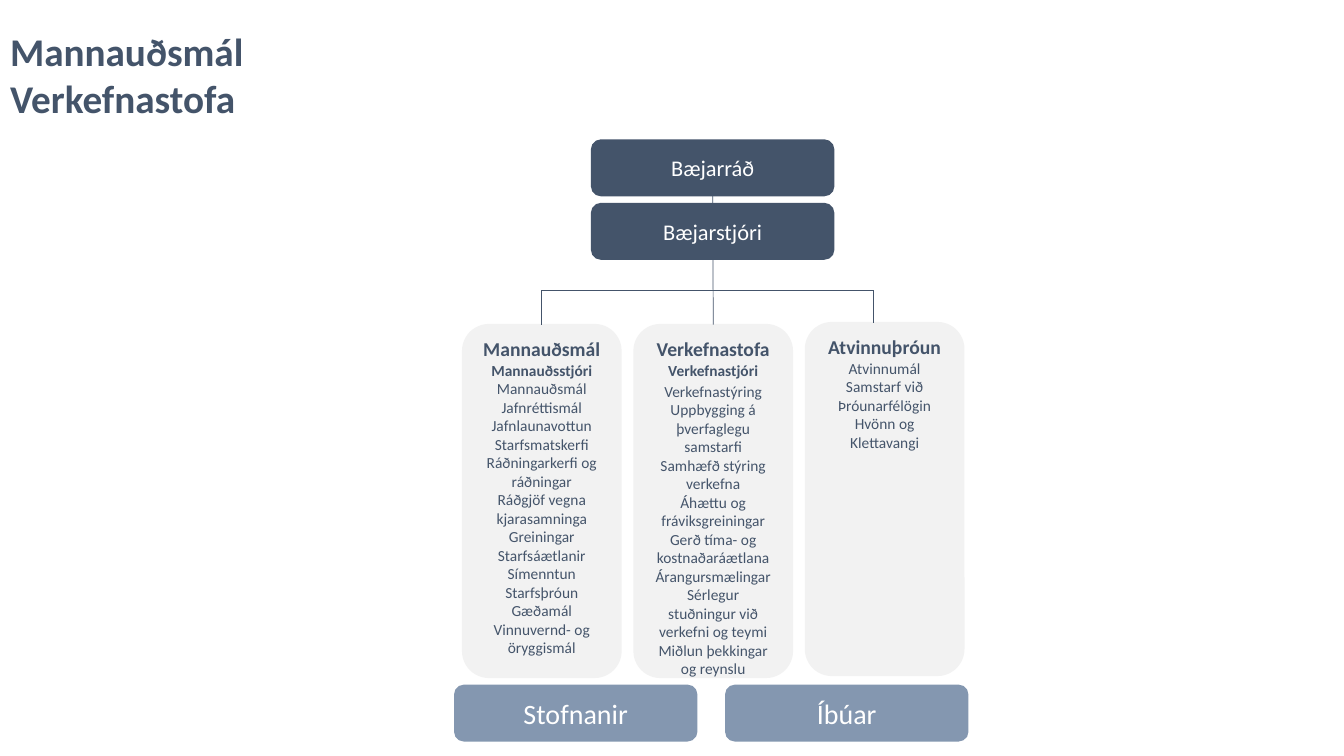
"""Build the organisation chart slide for human resources and the project office."""
from dataclasses import dataclass

from pptx import Presentation
from pptx.dml.color import RGBColor
from pptx.enum.shapes import MSO_CONNECTOR as Connector, MSO_SHAPE as Shape
from pptx.enum.text import MSO_ANCHOR as Anchor, MSO_AUTO_SIZE as AutoSize, PP_ALIGN as Align
from pptx.oxml.ns import qn
from pptx.util import Cm, Pt

NAVY, BLUE, PALE, WHITE = "44546A", "8497B0", "F2F2F2", "FFFFFF"
BOX_WIDTH, BOX_HEIGHT = 6.1, 1.4
COLUMN_WIDTH, COLUMN_HEIGHT = 3.99, 8.89
COLUMN_LEFT, COLUMN_PITCH = 11.66, 4.32
RAIL_TOP, RAIL_RIGHT = 7.32, 22.0


@dataclass
class Box:
    label: str
    left: float
    top: float
    fill: str
    size: int


@dataclass
class Column:
    heading: str
    manager: str
    tasks: list[str]
    top: float = 8.18
    manager_gap: int = 0


COUNCIL = Box("Bæjarráð", 14.91, 3.53, NAVY, 16)
MAYOR = Box("Bæjarstjóri", 14.91, 5.13, NAVY, 16)
AUDIENCES = [
    Box("Stofnanir", 11.46, 17.27, BLUE, 20),
    Box("Íbúar", 18.29, 17.27, BLUE, 20),
]
COLUMNS = [
    Column("Mannauðsmál", "Mannauðsstjóri", [
        "Mannauðsmál", "Jafnréttismál", "Jafnlaunavottun", "Starfsmatskerfi",
        "Ráðningarkerfi og ráðningar", "Ráðgjöf vegna kjarasamninga", "Greiningar",
        "Starfsáætlanir", "Símenntun", "Starfsþróun", "Gæðamál",
        "Vinnuvernd- og öryggismál",
    ]),
    Column("Verkefnastofa", "Verkefnastjóri", [
        "Verkefnastýring", "Uppbygging á þverfaglegu samstarfi",
        "Samhæfð stýring verkefna", "Áhættu og fráviksgreiningar",
        "Gerð tíma- og kostnaðaráætlana", "Árangursmælingar",
        "Sérlegur stuðningur við verkefni og teymi", "Miðlun þekkingar og reynslu",
    ], manager_gap=2),
    Column("Atvinnuþróun", "", [
        "Atvinnumál", "Samstarf við Þróunarfélögin Hvönn og Klettavangi",
    ], top=8.13),
]


def color(value: str) -> RGBColor:
    return RGBColor.from_string(value)


def format_paragraph(paragraph, size: int, ink: str, bold: bool = False, align=Align.CENTER) -> None:
    paragraph.alignment = align
    for run in paragraph.runs:
        run.font.name = "Calibri"
        run.font.size = Pt(size)
        run.font.bold = bold
        run.font.color.rgb = color(ink)


def add_panel(slide, left: float, top: float, width: float, height: float, fill: str):
    shape = slide.shapes.add_shape(
        Shape.ROUNDED_RECTANGLE, Cm(left), Cm(top), Cm(width), Cm(height))
    shape.shadow.inherit = False
    shape.fill.solid()
    shape.fill.fore_color.rgb = color(fill)
    shape.line.color.rgb = color(fill)
    shape.line.width = Pt(1)
    return shape


def add_box(slide, box: Box):
    shape = add_panel(slide, box.left, box.top, BOX_WIDTH, BOX_HEIGHT, box.fill)
    frame = shape.text_frame
    frame.text = box.label
    frame.vertical_anchor = Anchor.MIDDLE
    format_paragraph(frame.paragraphs[0], box.size, WHITE)
    return shape


def add_column(slide, column: Column, left: float):
    shape = add_panel(slide, left, column.top, COLUMN_WIDTH, COLUMN_HEIGHT, PALE)
    frame = shape.text_frame
    frame.vertical_anchor = Anchor.TOP
    titles = [title for title in (column.heading, column.manager) if title]
    frame.text = "\n".join(titles + column.tasks)
    for index, paragraph in enumerate(frame.paragraphs):
        format_paragraph(paragraph, 11 if index else 14, NAVY, index < len(titles))
    if column.manager_gap:
        frame.paragraphs[1].space_after = Pt(column.manager_gap)
    return shape


def add_line(slide, start: tuple[float, float], end: tuple[float, float]):
    line = slide.shapes.add_connector(
        Connector.STRAIGHT, Cm(start[0]), Cm(start[1]), Cm(end[0]), Cm(end[1]))
    line.line.color.rgb = color(NAVY)
    line.line.width = Pt(0.5)
    properties = line._element.spPr
    properties.append(properties.makeelement(qn("a:effectLst"), {}))
    return line


def format_title(title) -> None:
    title.left, title.top, title.width, title.height = Cm(0), Cm(0.38), Cm(14.22), Cm(2.97)
    title.fill.solid()
    title.fill.fore_color.rgb = color(WHITE)
    frame = title.text_frame
    frame.text = "Mannauðsmál\nVerkefnastofa"
    frame.auto_size = AutoSize.NONE
    frame.vertical_anchor = Anchor.MIDDLE
    for paragraph in frame.paragraphs:
        format_paragraph(paragraph, 28, NAVY, True, Align.LEFT)
        paragraph.line_spacing = 1.0
        paragraph.space_before = Pt(0)


def main() -> None:
    presentation = Presentation()
    presentation.slide_width, presentation.slide_height = Cm(33.87), Cm(19.05)
    slide = presentation.slides.add_slide(presentation.slide_layouts[5])
    format_title(slide.shapes.title)

    council = add_box(slide, COUNCIL)
    staff, projects, _ = [
        add_column(slide, column, COLUMN_LEFT + index * COLUMN_PITCH)
        for index, column in enumerate(COLUMNS)
    ]

    rail_left = COLUMN_LEFT + COLUMN_WIDTH / 2
    trunk = add_line(slide, (17.96, 4.93), (17.98, 8.18))
    trunk.begin_connect(council, 2)
    trunk.end_connect(projects, 0)
    add_line(slide, (rail_left, RAIL_TOP), (RAIL_RIGHT, RAIL_TOP))
    left_branch = add_line(slide, (rail_left, RAIL_TOP), (rail_left, 8.18))
    left_branch.end_connect(staff, 0)
    add_line(slide, (RAIL_RIGHT, RAIL_TOP), (RAIL_RIGHT, COLUMNS[2].top))

    for box in [MAYOR, *AUDIENCES]:
        add_box(slide, box)
    presentation.save("out.pptx")


if __name__ == "__main__":
    main()
